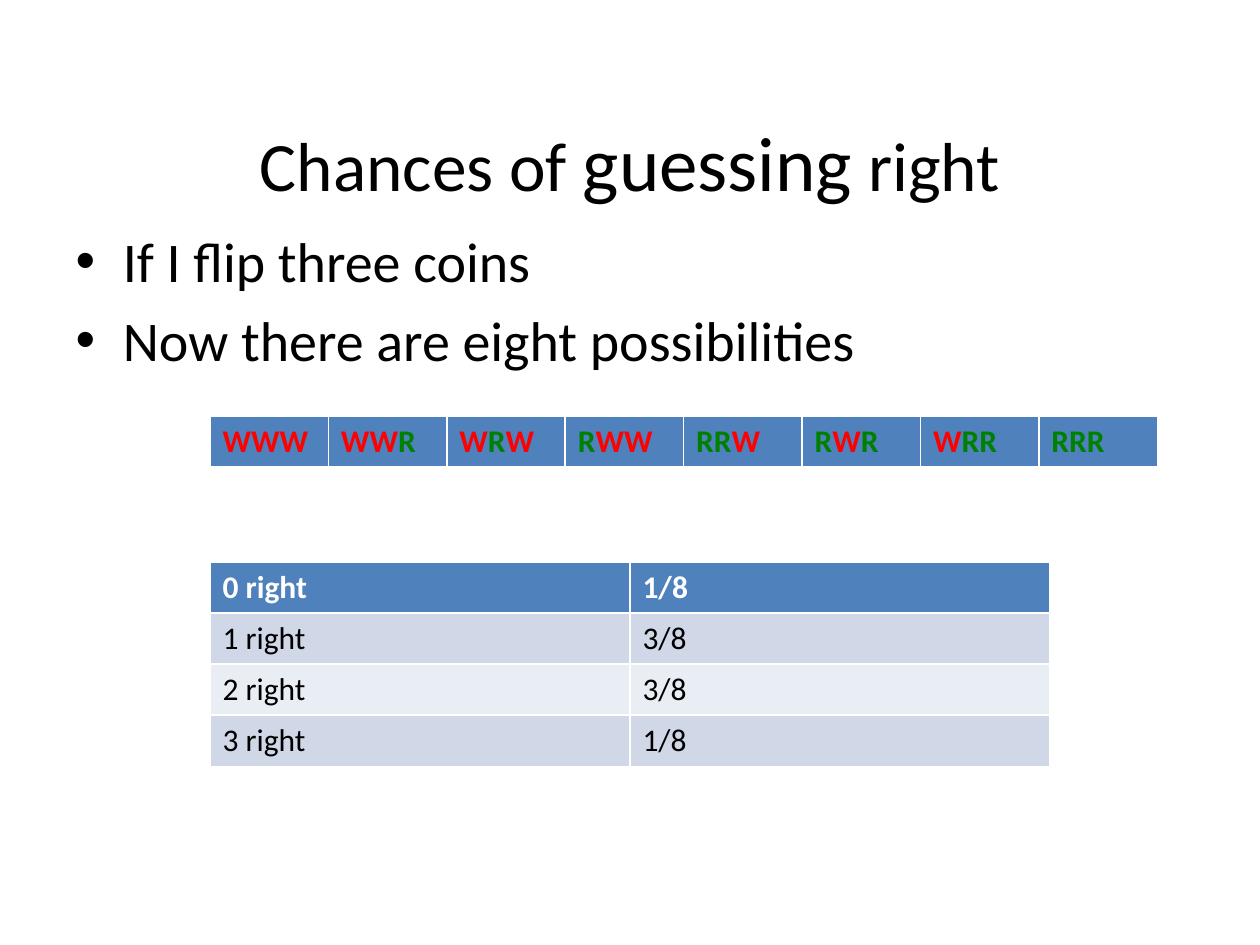
from itertools import groupby

from pptx import Presentation
from pptx.dml.color import RGBColor as RGB
from pptx.enum.text import MSO_ANCHOR as Anchor, MSO_AUTO_SIZE as Fit, PP_ALIGN as Align
from pptx.util import Inches as In, Pt

BLACK, WHITE = RGB(0, 0, 0), RGB(255, 255, 255)
RED, GREEN = RGB(255, 0, 0), RGB(0, 128, 0)
BLUE, PALE, LIGHT = RGB(0x4F, 0x81, 0xBD), RGB(0xD0, 0xD8, 0xE8), RGB(0xE9, 0xED, 0xF4)

TITLE = [("Chances of ", 39.6), ("guessing", 44), (" right", 39.6)]
POINTS = ["If I flip three coins", "Now there are eight possibilities"]
FLIPS = [["WWW", "WWR", "WRW", "RWW", "RRW", "RWR", "WRR", "RRR"]]
ODDS = [("0 right", "1/8"), ("1 right", "3/8"), ("2 right", "3/8"), ("3 right", "1/8")]
MARKS = {"W": RED, "R": GREEN}

WIDE, HIGH = 10, 7.5
EDGE = WIDE / 20
LEFT = WIDE / 6


def place(shape, *box):
    for name, size in zip(("left", "top", "width", "height"), box):
        setattr(shape, name, In(size))


def write(para, text, size, color=BLACK, bold=False):
    run = para.add_run()
    run.text = text
    form = {"name": "Calibri", "size": Pt(size), "bold": bold}
    for name, value in form.items():
        setattr(run.font, name, value)
    run.font.color.rgb = color


def add_grid(slide, rows, top, width, height, split):
    """Add a table; split turns a cell's text and row number into coloured parts."""
    table = slide.shapes.add_table(
        len(rows), len(rows[0]), In(LEFT), In(top), In(width), In(height)).table
    for r, row in enumerate(rows):
        for c, text in enumerate(row):
            cell = table.cell(r, c)
            cell.fill.solid()
            cell.fill.fore_color.rgb = (PALE if r % 2 else LIGHT) if r else BLUE
            for part, color in split(text, r):
                write(cell.text_frame.paragraphs[0], part, 18, color, r == 0)


def by_mark(text, row):
    return [("".join(run), MARKS[mark]) for mark, run in groupby(text)]


def by_row(text, row):
    return [(text, BLACK if row else WHITE)]


deck = Presentation()
deck.slide_width, deck.slide_height = In(WIDE), In(HIGH)
slide = deck.slides.add_slide(deck.slide_layouts[1])

title, body = slide.placeholders
place(title, EDGE, 0.3, WIDE - 2 * EDGE, 1.25)
frame = title.text_frame
form = {"auto_size": Fit.NONE, "vertical_anchor": Anchor.TOP,
        "margin_top": In(0.61), "margin_bottom": 0}
for name, value in form.items():
    setattr(frame, name, value)
frame.paragraphs[0].alignment = Align.CENTER
for text, size in TITLE:
    write(frame.paragraphs[0], text, size)

place(body, EDGE, 1.75, WIDE - 2 * EDGE, 4.95)
frame = body.text_frame
for i, text in enumerate(POINTS):
    write(frame.add_paragraph() if i else frame.paragraphs[0], text, 32)

add_grid(slide, FLIPS, 3.3, 7.52, 0.4, by_mark)
add_grid(slide, ODDS, 4.46, WIDE * 2 / 3, 1.62, by_row)

deck.save("out.pptx")
